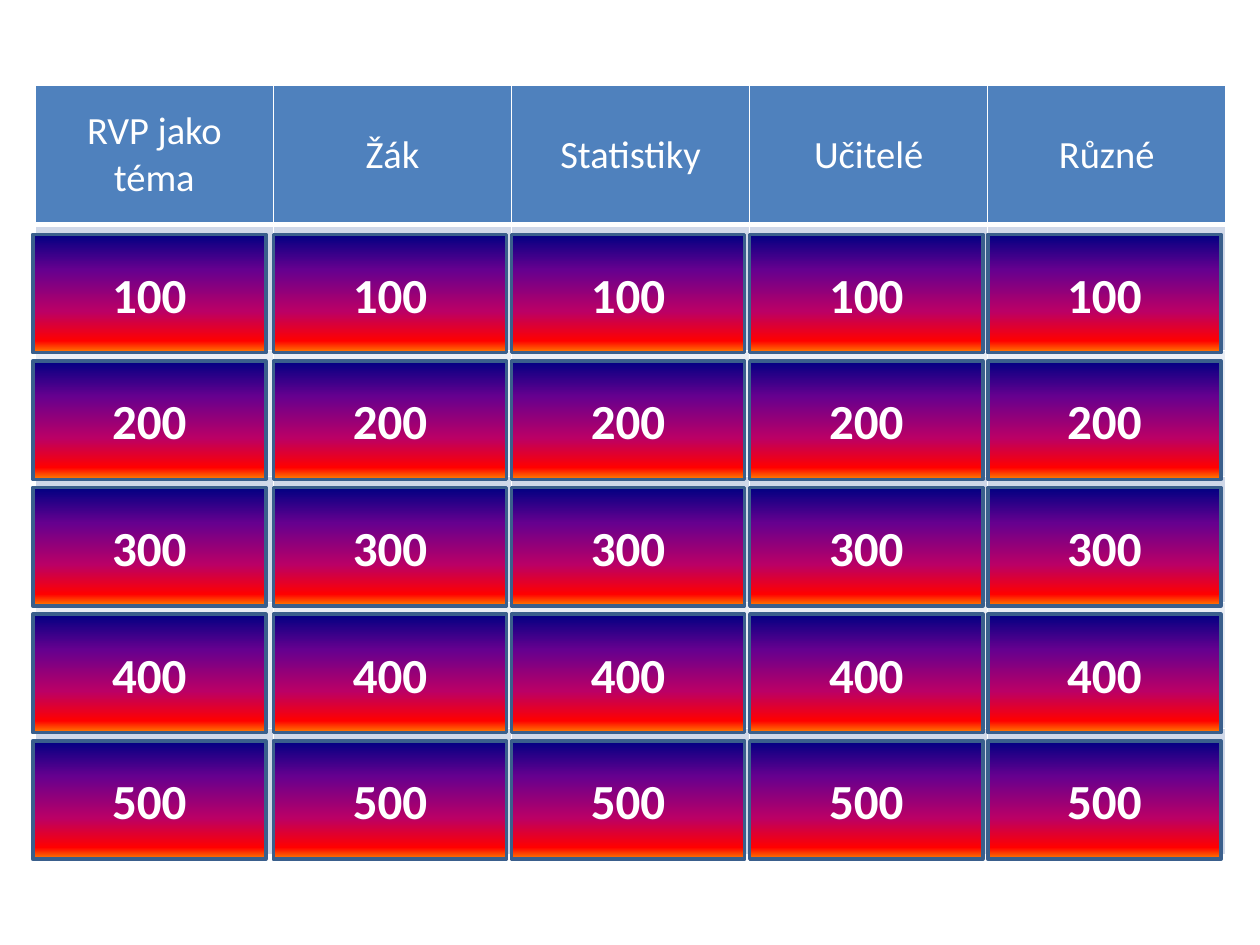
from lxml import etree
from pptx import Presentation
from pptx import util as u
from pptx.dml.color import RGBColor
from pptx.enum import shapes, text
from pptx.oxml.ns import qn

COLORS = {
    "white": "FFFFFF",
    "header": "4F81BD",
    "band_dark": "D0D8E8",
    "band_light": "E9EDF4",
    "tile_line": "3A5F8C",
}
TILE_GRADIENT = [(0, "000082"), (30, "66008F"), (65, "BA0066"),
                 (90, "FF0000"), (100, "FF8200")]
TOPICS = ["RVP jako téma", "Žák", "Statistiky", "Učitelé", "Různé"]
POINTS = [100, 200, 300, 400, 500]

# Board grid, in inches
LEFT, TOP = 0.28, 0.68
COLUMN_WIDTH, HEADER_HEIGHT, ROW_HEIGHT = 1.89, 1.1, 1
TILE_TOP, TILE_PITCH = 1.86, 1.005
TILE_WIDTH, TILE_HEIGHT = 1.85, 0.94
FIRST_TILE_SHIFT = 0.02

HEADER_FONT = {"name": "Calibri", "size": u.Pt(22), "bold": False}
TILE_FONT = {"name": "Calibri", "size": u.Pt(28), "bold": True}


def rgb(name):
    return RGBColor.from_string(COLORS[name])


def write_centered(frame, words, font_format):
    frame.text = words
    paragraph = frame.paragraphs[0]
    paragraph.alignment = text.PP_ALIGN.CENTER
    font = paragraph.runs[0].font
    for attribute, value in font_format.items():
        setattr(font, attribute, value)
    font.color.rgb = rgb("white")


def set_borders(cell, bottom_width):
    """Draw white cell borders, 1 pt except for the bottom one."""
    properties = cell._tc.get_or_add_tcPr()
    widths = {"lnL": 1, "lnR": 1, "lnT": 1, "lnB": bottom_width}
    for position, (side, width) in enumerate(widths.items()):
        line = etree.Element(qn(f"a:{side}"), w=str(u.Pt(width)))
        fill = etree.SubElement(line, qn("a:solidFill"))
        etree.SubElement(fill, qn("a:srgbClr"), val=COLORS["white"])
        properties.insert(position, line)


def style_cell(cell, fill_name, bottom_width=1):
    cell.fill.solid()
    cell.fill.fore_color.rgb = rgb(fill_name)
    set_borders(cell, bottom_width)


def add_board(slide):
    row_count, column_count = len(POINTS) + 1, len(TOPICS)
    table = slide.shapes.add_table(
        row_count, column_count, u.Inches(LEFT), u.Inches(TOP),
        u.Inches(COLUMN_WIDTH * column_count),
        u.Inches(HEADER_HEIGHT + ROW_HEIGHT * len(POINTS))).table
    for column in table.columns:
        column.width = u.Inches(COLUMN_WIDTH)
    for index, row in enumerate(table.rows):
        row.height = u.Inches(ROW_HEIGHT if index else HEADER_HEIGHT)

    # Topic headings
    for column, topic in enumerate(TOPICS):
        cell = table.cell(0, column)
        style_cell(cell, "header", bottom_width=3)
        cell.vertical_anchor = text.MSO_ANCHOR.MIDDLE
        write_centered(cell.text_frame, topic, HEADER_FONT)

    # Banded rows behind the tiles
    for row in range(1, row_count):
        for column in range(column_count):
            style_cell(table.cell(row, column),
                       "band_dark" if row % 2 else "band_light")


def set_gradient(shape):
    shape.fill.gradient()
    shape.fill.gradient_angle = 270  # top to bottom
    stops = shape._element.spPr.find(".//" + qn("a:gsLst"))
    for stop in list(stops):
        stops.remove(stop)
    for percent, color in TILE_GRADIENT:
        stop = etree.SubElement(stops, qn("a:gs"), pos=str(percent * 1000))
        etree.SubElement(stop, qn("a:srgbClr"), val=color)


def add_tile(slide, column, row, points):
    left = LEFT + column * COLUMN_WIDTH
    if column == 0:
        left -= FIRST_TILE_SHIFT
    tile = slide.shapes.add_shape(
        shapes.MSO_SHAPE.RECTANGLE, u.Inches(left),
        u.Inches(TILE_TOP + row * TILE_PITCH),
        u.Inches(TILE_WIDTH), u.Inches(TILE_HEIGHT))
    tile.shadow.inherit = False
    set_gradient(tile)
    tile.line.color.rgb = rgb("tile_line")
    tile.line.width = u.Pt(2)
    tile.text_frame.vertical_anchor = text.MSO_ANCHOR.MIDDLE
    write_centered(tile.text_frame, str(points), TILE_FONT)


def main():
    presentation = Presentation()
    presentation.slide_width = u.Inches(10)
    presentation.slide_height = u.Inches(7.5)
    slide = presentation.slides.add_slide(presentation.slide_layouts[6])

    add_board(slide)
    for column in range(len(TOPICS)):
        for row, points in enumerate(POINTS):
            add_tile(slide, column, row, points)

    presentation.save("out.pptx")


if __name__ == "__main__":
    main()
